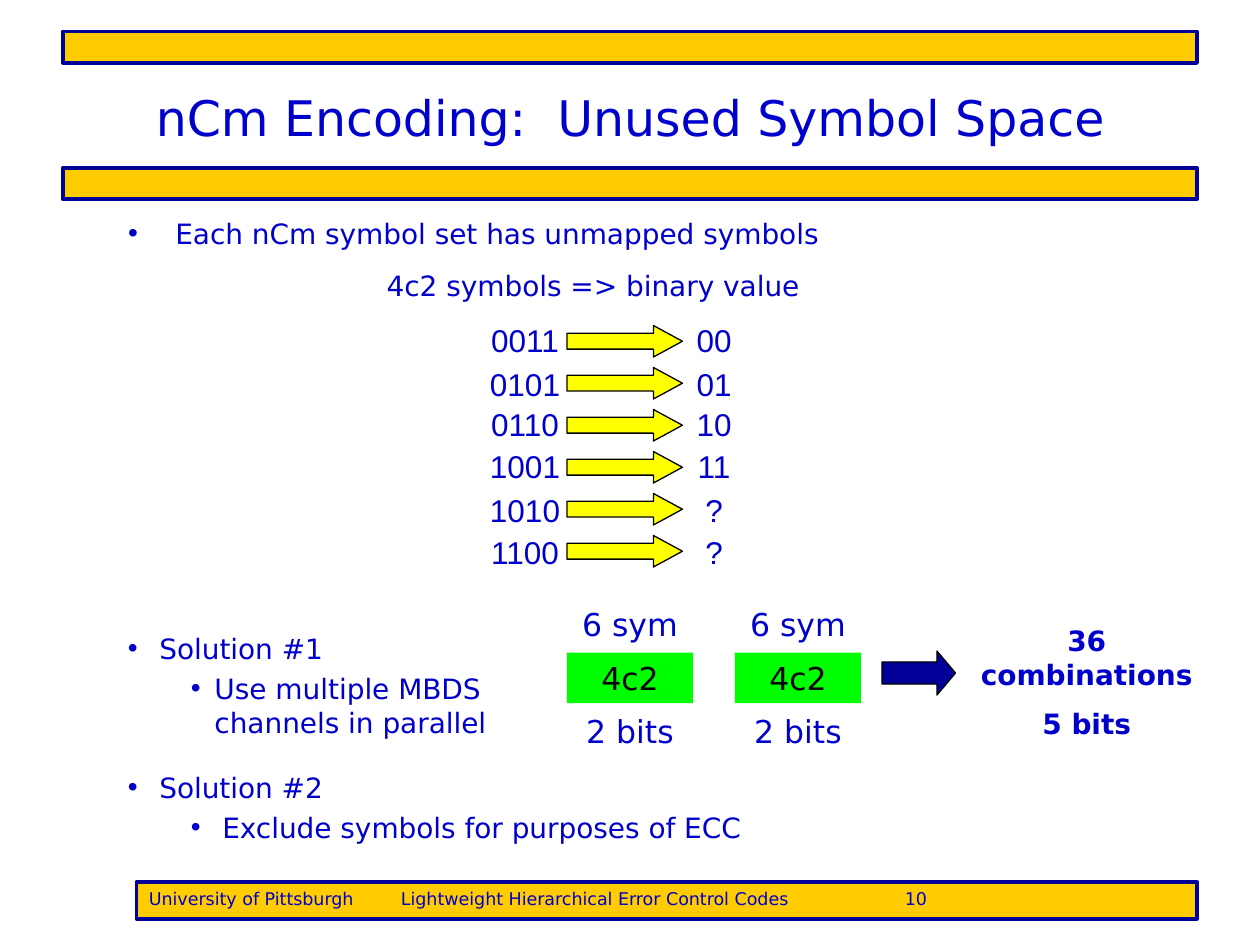
import pptx
import pptx.util
import pptx.dml.color
import pptx.enum.shapes
import pptx.enum.text
import pptx.oxml.ns
from lxml import etree

Pt = pptx.util.Pt
SHAPE = pptx.enum.shapes.MSO_SHAPE
ALIGN = pptx.enum.text.PP_ALIGN
ANCHOR = pptx.enum.text.MSO_ANCHOR
AUTO = pptx.enum.text.MSO_AUTO_SIZE

# Content
TITLE = "nCm Encoding:  Unused Symbol Space"
FOOTER = "University of Pittsburgh\tLightweight Hierarchical Error Control Codes\t10"
FOOTER_TABS = (144, 432)
INTRO = "Each nCm symbol set has unmapped symbols"
MAPPING_HEADING = "4c2 symbols => binary value"
# symbol, value, top of the labels
MAPPING = [
    ("0011", "00", 180), ("0101", "01", 205.2), ("0110", "10", 228.2),
    ("1001", "11", 252), ("1010", "?", 277.2), ("1100", "?", 301),
]
CHANNEL = ("6 sym", "4c2", "2 bits")
CHANNEL_LEFTS = (324, 420)
RESULT = ["36 combinations", "5 bits"]
# box, then (text, level, left margin, hanging indent)
SOLUTIONS = [
    ((66, 357.2, 228, 69), [
        ("Solution #1", 0, 18, 18),
        ("Use multiple MBDS channels in parallel", 1, 49.5, 13.5)]),
    ((66, 436.5, 504, 49.5), [
        ("Solution #2", 0, 18, 18),
        ("Exclude symbols for purposes of ECC", 1, 54, 18)]),
]

THEME = {
    "text": "0000CC", "navy": "000099", "gold": "FFCC00", "yellow": "FFFF00",
    "green": "00FF00", "black": "000000",
    "font": "DejaVu Sans", "digits": "Arial",
    "title": 28, "body": 16, "label": 18, "footer": 10,
}


def rgb(name):
    return pptx.dml.color.RGBColor.from_string(THEME[name])


def place(sp, box):
    sp.left, sp.top, sp.width, sp.height = (Pt(v) for v in box)


def add_run(p, text, size="body", color="text", font="font", bold=False):
    r = p.add_run()
    r.text = text
    r.font.size = Pt(THEME[size])
    r.font.name = THEME[font]
    r.font.color.rgb = rgb(color)
    r.font.bold = bold


def add_ppr_child(p, tag, **attrs):
    child = etree.SubElement(p._p.get_or_add_pPr(), pptx.oxml.ns.qn(tag))
    for key, value in attrs.items():
        child.set(key, str(value))
    return child


def add_bullet(p, left, hanging):
    ppr = p._p.get_or_add_pPr()
    ppr.set("marL", str(Pt(left)))
    ppr.set("indent", str(-Pt(hanging)))
    add_ppr_child(p, "a:buFont", typeface=THEME["digits"])
    add_ppr_child(p, "a:buChar", char="•")


def paragraphs(tf, count, gap):
    """Return count paragraphs, with the gap before all but the first."""
    for i in range(count):
        p = tf.add_paragraph() if i else tf.paragraphs[0]
        p.space_before = Pt(gap if i else 0)
        yield p


def add_shape(s, kind, box, fill, line=None, width=0.75):
    sp = s.shapes.add_shape(kind, *(Pt(v) for v in box))
    sp.shadow.inherit = False
    sp.fill.solid()
    sp.fill.fore_color.rgb = rgb(fill)
    if line:
        sp.line.color.rgb = rgb(line)
        sp.line.width = Pt(width)
    else:
        sp.line.fill.background()
    return sp


def add_arrow(s, box, fill, head):
    sp = add_shape(s, SHAPE.RIGHT_ARROW, box, fill, "black")
    sp.adjustments[0], sp.adjustments[1] = 0.5, head


def add_bar(s, box):
    return add_shape(s, SHAPE.RECTANGLE, box, "gold", "navy", 2.25)


def add_textbox(s, box):
    tf = s.shapes.add_textbox(*(Pt(v) for v in box)).text_frame
    tf.word_wrap = True
    return tf


def fill_centred(tf, lines, **style):
    tf.vertical_anchor = ANCHOR.TOP
    for p, text in zip(paragraphs(tf, len(lines), 9), lines):
        p.alignment = ALIGN.CENTER
        add_run(p, text, **style)


def add_frame(s):
    for top in (95.8, 18):
        add_bar(s, (36, top, 648, 18))
    tf = add_bar(s, (78, 504, 606, 21)).text_frame
    tf.vertical_anchor = ANCHOR.TOP
    p = tf.paragraphs[0]
    p.alignment = ALIGN.LEFT
    tabs = add_ppr_child(p, "a:tabLst")
    for pos in FOOTER_TABS:
        etree.SubElement(tabs, pptx.oxml.ns.qn("a:tab"), pos=str(Pt(pos)), algn="l")
    add_run(p, FOOTER, "footer")


def fill_placeholders(s):
    title, body = s.shapes.title, s.placeholders[1]
    place(title, (36, 21.6, 648, 90))
    place(body, (66, 120, 498, 60))
    for sp in (title, body):
        sp.text_frame.auto_size = AUTO.NONE
    title.text_frame.vertical_anchor = ANCHOR.MIDDLE
    p = title.text_frame.paragraphs[0]
    p.alignment = ALIGN.CENTER
    add_run(p, TITLE, "title")
    p = body.text_frame.paragraphs[0]
    p.space_before = Pt(0)
    add_bullet(p, 27, 27)
    add_run(p, INTRO)


def add_mapping(s):
    fill_centred(add_textbox(s, (186, 150, 306, 26.6)), [MAPPING_HEADING])
    for i, (symbol, value, top) in enumerate(MAPPING):
        for left, text in ((270, symbol), (378, value)):
            fill_centred(add_textbox(s, (left, top, 60, 28.8)), [text],
                         size="label", font="digits")
        add_arrow(s, (324, 186 + 24 * i, 66, 18), "yellow", 0.92)


def add_channels(s):
    above, name, below = CHANNEL
    for left in CHANNEL_LEFTS:
        block = add_shape(s, SHAPE.RECTANGLE, (left, 373, 72, 28.8), "green")
        fill_centred(block.text_frame, [name], size="label", color="black")
        for top, text in ((342, above), (403.2, below)):
            fill_centred(add_textbox(s, (left, top, 72, 28.8)), [text], size="label")
    add_arrow(s, (504, 372, 42, 25.2), "navy", 0.42)
    fill_centred(add_textbox(s, (540, 352.8, 162, 75)), RESULT, bold=True)


def add_solutions(s):
    for box, items in SOLUTIONS:
        tf = add_textbox(s, box)
        for p, (text, level, left, hanging) in zip(paragraphs(tf, len(items), 3.8), items):
            p.level = level
            add_bullet(p, left, hanging)
            add_run(p, text)


def main():
    prs = pptx.Presentation()
    prs.slide_width, prs.slide_height = Pt(720), Pt(540)
    s = prs.slides.add_slide(prs.slide_layouts[1])
    add_frame(s)
    fill_placeholders(s)
    add_mapping(s)
    add_channels(s)
    add_solutions(s)
    prs.save("out.pptx")


if __name__ == "__main__":
    main()
